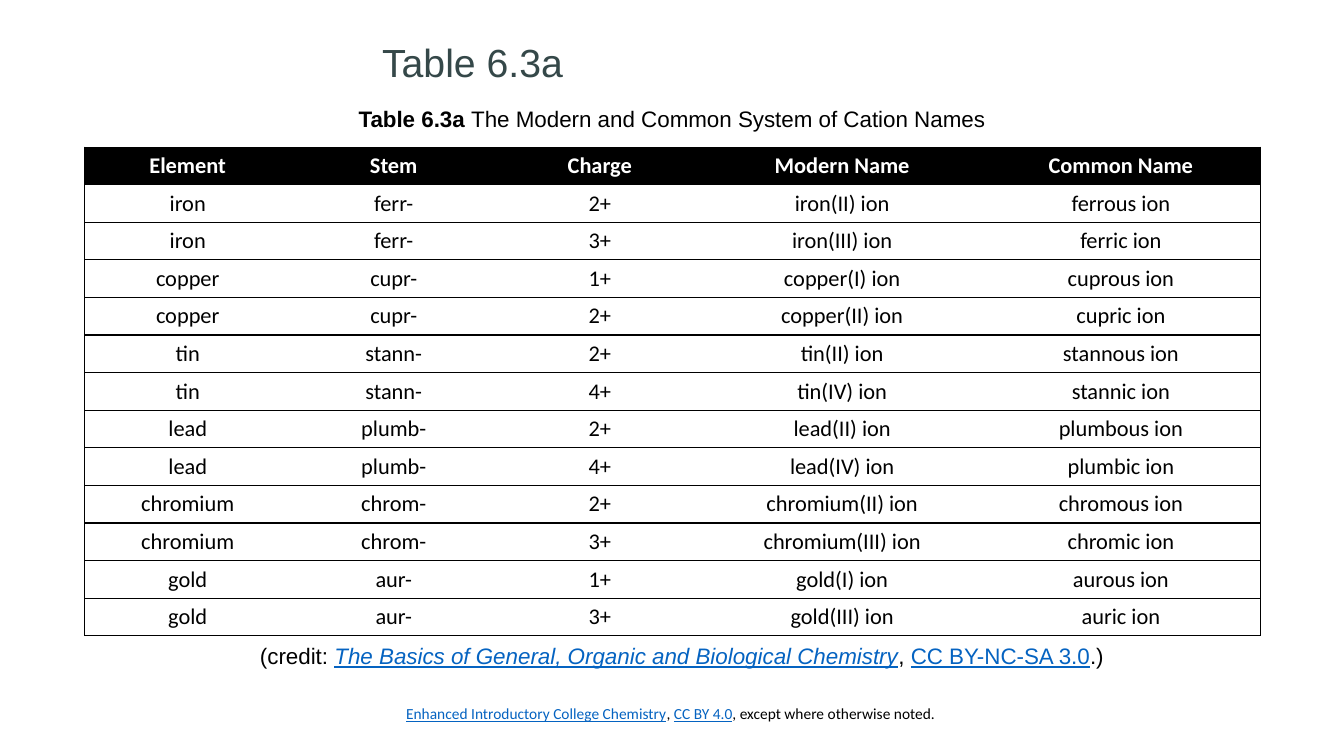
from lxml import etree
from pptx import Presentation
from pptx.dml.color import RGBColor
from pptx.enum.text import MSO_ANCHOR, MSO_AUTO_SIZE, PP_ALIGN
from pptx.oxml.ns import qn
from pptx.util import Inches, Pt

# Content: each run is (text, format)
BLACK = RGBColor(0x00, 0x00, 0x00)
WHITE = RGBColor(0xFF, 0xFF, 0xFF)
SLATE = RGBColor(0x35, 0x48, 0x49)
LINK_BLUE = RGBColor(0x05, 0x63, 0xC1)
LEFT, CENTER = PP_ALIGN.LEFT, PP_ALIGN.CENTER
MIDDLE, BOTTOM = MSO_ANCHOR.MIDDLE, MSO_ANCHOR.BOTTOM
LINK = dict(color=LINK_BLUE, underline=True)

TITLE = [("Table 6.3a", {})]
CAPTION = [
    ("Table 6.3a ", dict(bold=True)),
    ("The Modern and Common System of Cation Names", {}),
]
CREDIT = [
    ("(credit: ", {}),
    ("The Basics of General, Organic and Biological Chemistry", dict(LINK, italic=True)),
    (", ", {}),
    ("CC BY-NC-SA 3.0", LINK),
    (".)", {}),
]
FOOTER = [
    ("Enhanced Introductory College Chemistry", LINK),
    (", ", {}),
    ("CC BY 4.0", LINK),
    (", except where otherwise noted.", {}),
]
CATIONS = [
    ("Element", "Stem", "Charge", "Modern Name", "Common Name"),
    ("iron", "ferr-", "2+", "iron(II) ion", "ferrous ion"),
    ("iron", "ferr-", "3+", "iron(III) ion", "ferric ion"),
    ("copper", "cupr-", "1+", "copper(I) ion", "cuprous ion"),
    ("copper", "cupr-", "2+", "copper(II) ion", "cupric ion"),
    ("tin", "stann-", "2+", "tin(II) ion", "stannous ion"),
    ("tin", "stann-", "4+", "tin(IV) ion", "stannic ion"),
    ("lead", "plumb-", "2+", "lead(II) ion", "plumbous ion"),
    ("lead", "plumb-", "4+", "lead(IV) ion", "plumbic ion"),
    ("chromium", "chrom-", "2+", "chromium(II) ion", "chromous ion"),
    ("chromium", "chrom-", "3+", "chromium(III) ion", "chromic ion"),
    ("gold", "aur-", "1+", "gold(I) ion", "aurous ion"),
    ("gold", "aur-", "3+", "gold(III) ion", "auric ion"),
]

# Layout in inches
TITLE_BOX = (3.69, 0.2, 4.3, 0.7)
CAPTION_BOX = (2.85, 0.99, 7.63, 0.37)
CREDIT_BOX = (2.48, 6.32, 8.8, 0.37)
FOOTER_BOX = (3.93, 6.94, 7.07, 0.4)
TABLE_LEFT, TABLE_TOP, TABLE_WIDTH, TABLE_HEIGHT = 0.84, 1.46, 11.66, 4.85
COL_SHARES = (204, 204, 204, 276, 276)


def write(tf, runs, size=16, font="Arial", color=BLACK, align=LEFT):
    p = tf.paragraphs[0]
    p.alignment = align
    for text, fmt in runs:
        r = p.add_run()
        r.text = text
        r.font.name, r.font.size = font, Pt(size)
        r.font.color.rgb = fmt.get("color", color)
        r.font.bold = fmt.get("bold", False)
        r.font.italic = fmt.get("italic", False)
        r.font.underline = fmt.get("underline", False)


def add_text(slide, box, runs, wrap=True, **fmt):
    tf = slide.shapes.add_textbox(*map(Inches, box)).text_frame
    tf.word_wrap = wrap
    write(tf, runs, **fmt)


def set_borders(cell, drawn):
    tc_pr = cell._tc.get_or_add_tcPr()
    for i, side in enumerate("LRTB"):
        ln = etree.Element(qn(f"a:ln{side}"), w=str(Pt(1)))
        if side in drawn:
            fill = etree.SubElement(ln, qn("a:solidFill"))
            etree.SubElement(fill, qn("a:srgbClr"), val=str(BLACK))
        else:
            etree.SubElement(ln, qn("a:noFill"))
        tc_pr.insert(i, ln)


def add_cation_table(slide):
    n_rows, n_cols = len(CATIONS), len(COL_SHARES)
    box = map(Inches, (TABLE_LEFT, TABLE_TOP, TABLE_WIDTH, TABLE_HEIGHT))
    table = slide.shapes.add_table(n_rows, n_cols, *box).table
    table.horz_banding = False
    for col, share in zip(table.columns, COL_SHARES):
        col.width = Inches(TABLE_WIDTH * share / sum(COL_SHARES))
    for i, row in enumerate(CATIONS):
        table.rows[i].height = Inches(TABLE_HEIGHT / n_rows)
        header = i == 0
        for j, text in enumerate(row):
            cell = table.cell(i, j)
            cell.margin_left = cell.margin_right = 0
            cell.margin_top = cell.margin_bottom = 0
            cell.vertical_anchor = MIDDLE
            cell.fill.solid()
            cell.fill.fore_color.rgb = BLACK if header else WHITE
            write(cell.text_frame, [(text, dict(bold=header))], font="Calibri",
                  color=WHITE if header else BLACK, align=CENTER)
            outer = {0: "L", n_cols - 1: "R"}.get(j, "")
            set_borders(cell, "TB" + outer)


def main():
    prs = Presentation()
    prs.slide_width, prs.slide_height = Inches(13.33), Inches(7.5)
    s = prs.slides.add_slide(prs.slide_layouts[5])

    # Title
    title = s.shapes.title
    title.left, title.top, title.width, title.height = map(Inches, TITLE_BOX)
    tf = title.text_frame
    tf.auto_size = MSO_AUTO_SIZE.NONE
    tf.vertical_anchor = BOTTOM
    write(tf, TITLE, size=28, color=SLATE)
    tf.paragraphs[0].line_spacing = 0.9

    # Caption, table, credit and footer
    add_text(s, CAPTION_BOX, CAPTION, align=CENTER)
    add_cation_table(s)
    add_text(s, CREDIT_BOX, CREDIT, wrap=False)
    add_text(s, FOOTER_BOX, FOOTER, size=11, font="Calibri")

    prs.save("out.pptx")


if __name__ == "__main__":
    main()
